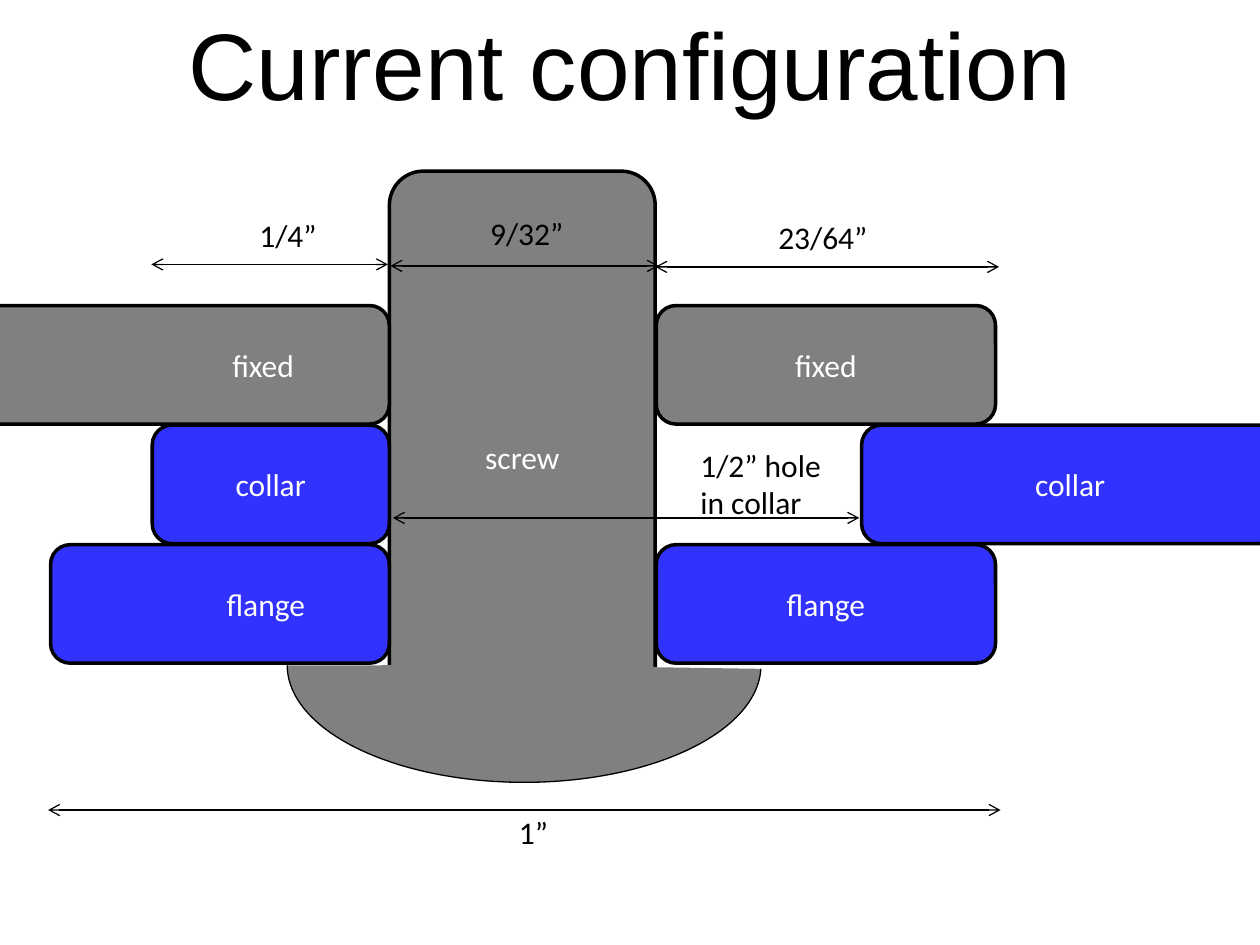
from lxml.etree import SubElement
from pptx import Presentation
from pptx.dml.color import RGBColor
from pptx.enum.shapes import MSO_CONNECTOR, MSO_SHAPE
from pptx.enum.text import MSO_ANCHOR, MSO_AUTO_SIZE, PP_ALIGN
from pptx.oxml.ns import qn
from pptx.util import Cm, Pt

HUE = {"ink": "000000", "text": "FFFFFF", "steel": "808080", "blue": "3232FF"}
BODY = {"name": "Calibri", "size": Pt(18)}
HEAD = {"name": "Arial", "size": Pt(54)}
FIT = {"word_wrap": False, "auto_size": MSO_AUTO_SIZE.SHAPE_TO_FIT_TEXT}
WALL, BORE = 7.85, 13.23  # left and right sides of the screw
TOP, STEP, THICK = 6.16, 2.41, 2.39  # rows of plates
INSET = 0.25

# words, row, left, right, colour, left inset
PLATES = [
    ("fixed", 0, -1.09, WALL, "steel", 4.1),
    ("fixed", 0, BORE, 20.07, "steel", INSET),
    ("collar", 1, 3.07, WALL, "blue", INSET),
    ("collar", 1, 17.37, 25.78, "blue", INSET),
    ("flange", 2, 1.02, WALL, "blue", 2.1),
    ("flange", 2, BORE, 20.07, "blue", INSET),
]
# words, label left, top, width, height, arrow start, end, level
SIZES = [
    ("9/32”", 9.63, 4.19, 2.01, 1.02, 7.87, 13.28, 5.36),
    ("1/4”", 4.98, 4.24, 1.68, 1.02, 3.05, 7.82, 5.33),
    ("23/64”", 15.44, 4.27, 2.34, 1.02, 13.21, 20.14, 5.38),
    ("1/2” hole\vin collar", 13.87, 8.86, 2.97, 1.8, 7.92, 17.32, 10.44),
    ("1”", 10.21, 16.26, 1.12, 1.02, 0.97, 20.17, 16.33),
]


def tint(name):
    return RGBColor.from_string(HUE[name])


def apply(item, form):
    for key, value in form.items():
        setattr(item, key, value)


def write(frame, words, form, hue, align):
    frame.text = words
    para = frame.paragraphs[0]
    para.alignment = align
    font = para.runs[0].font
    for run in para.runs:
        font = run.font
        apply(font, form)
        font.color.rgb = tint(hue)


def ink(line, width):
    line.color.rgb = tint("ink")
    line.width = Pt(width)


def add_part(slide, kind, box, hue, width, words="", inset=INSET):
    part = slide.shapes.add_shape(kind, *map(Cm, box))
    part.shadow.inherit = False
    part.fill.solid()
    part.fill.fore_color.rgb = tint(hue)
    ink(part.line, width)
    if words:
        frame = part.text_frame
        apply(frame, {"vertical_anchor": MSO_ANCHOR.MIDDLE, "margin_left": Cm(inset)})
        write(frame, words, BODY, "text", PP_ALIGN.CENTER)
    return part


def add_span(slide, start, end, level):
    """Draw a level line with an open arrowhead at each end."""
    span = slide.shapes.add_connector(
        MSO_CONNECTOR.STRAIGHT, Cm(start), Cm(level), Cm(end), Cm(level))
    ink(span.line, 0.75)
    edge = span.line._get_or_add_ln()
    for end_tag in ("a:headEnd", "a:tailEnd"):
        SubElement(edge, qn(end_tag), type="arrow")
    SubElement(span._element.spPr, qn("a:effectLst"))


def add_label(slide, words, box):
    frame = slide.shapes.add_textbox(*map(Cm, box)).text_frame
    apply(frame, FIT)
    write(frame, words, BODY, "ink", PP_ALIGN.LEFT)


def set_title(slide, words):
    title = slide.shapes.title
    apply(title, {"left": 0, "top": 0, "width": Cm(25.4), "height": Cm(2.57)})
    apply(title.text_frame, {"vertical_anchor": MSO_ANCHOR.TOP, "word_wrap": True,
                             "auto_size": MSO_AUTO_SIZE.NONE})
    write(title.text_frame, words, HEAD, "ink", PP_ALIGN.CENTER)


def add_screw(slide):
    box = (WALL, 3.45, BORE - WALL - 0.02, 11.51)
    shaft = add_part(slide, MSO_SHAPE.ROUNDED_RECTANGLE, box, "steel", 2, "screw")
    shaft.adjustments[0] = 0.128


def add_dome(slide):
    """Draw the screw head as a half ellipse that hangs below the plates."""
    dome = add_part(slide, MSO_SHAPE.ARC, (5.79, 11.05, 9.55, 4.72), "steel", 0.75)
    dome.rotation = 180
    dome.adjustments[0] = 108.52
    dome.adjustments[1] = 0


def main():
    deck = Presentation()
    apply(deck, {"slide_width": Cm(25.4), "slide_height": Cm(19.05)})
    slide = deck.slides.add_slide(deck.slide_layouts[5])
    set_title(slide, "Current configuration")
    add_screw(slide)
    for words, row, left, right, hue, inset in PLATES:
        box = (left, TOP + row * STEP, right - left, THICK)
        add_part(slide, MSO_SHAPE.ROUNDED_RECTANGLE, box, hue, 2, words, inset)
    add_dome(slide)
    for words, *box, start, end, level in SIZES:
        add_span(slide, start, end, level)
        add_label(slide, words, box)
    deck.save("out.pptx")


if __name__ == "__main__":
    main()
